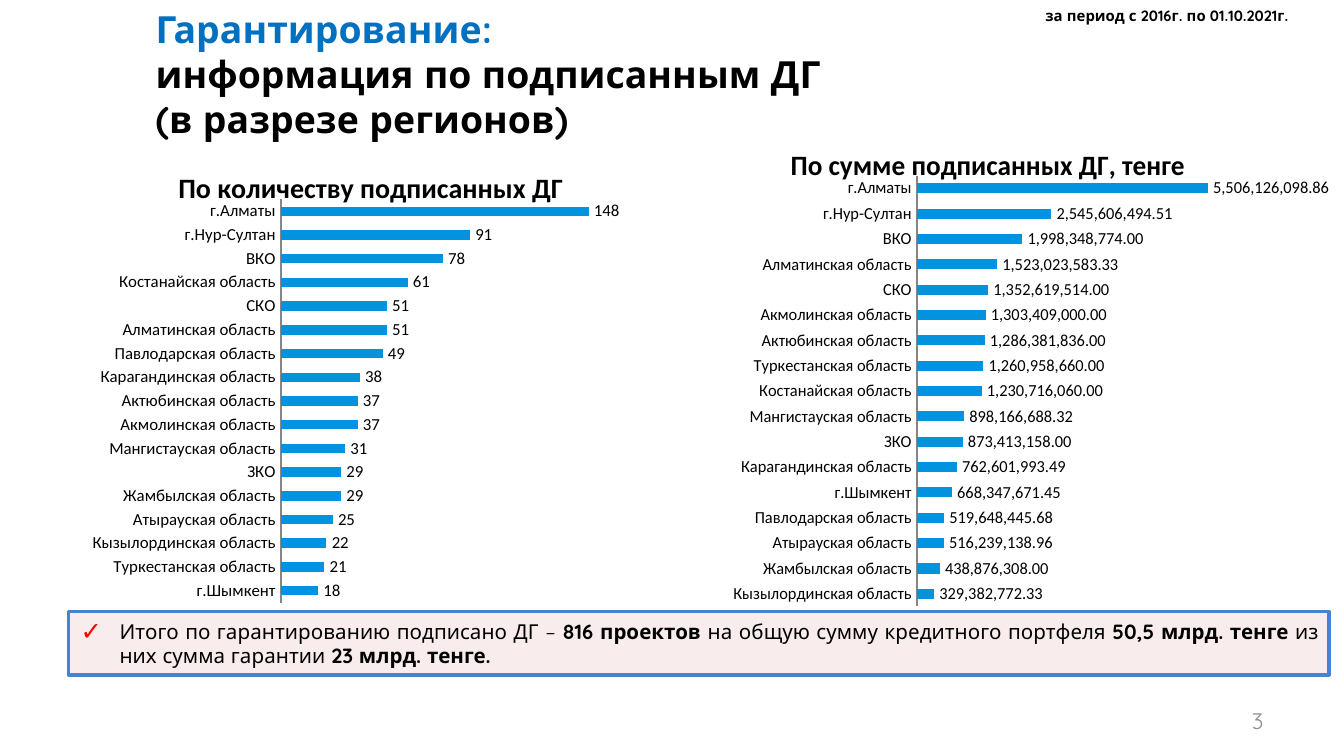
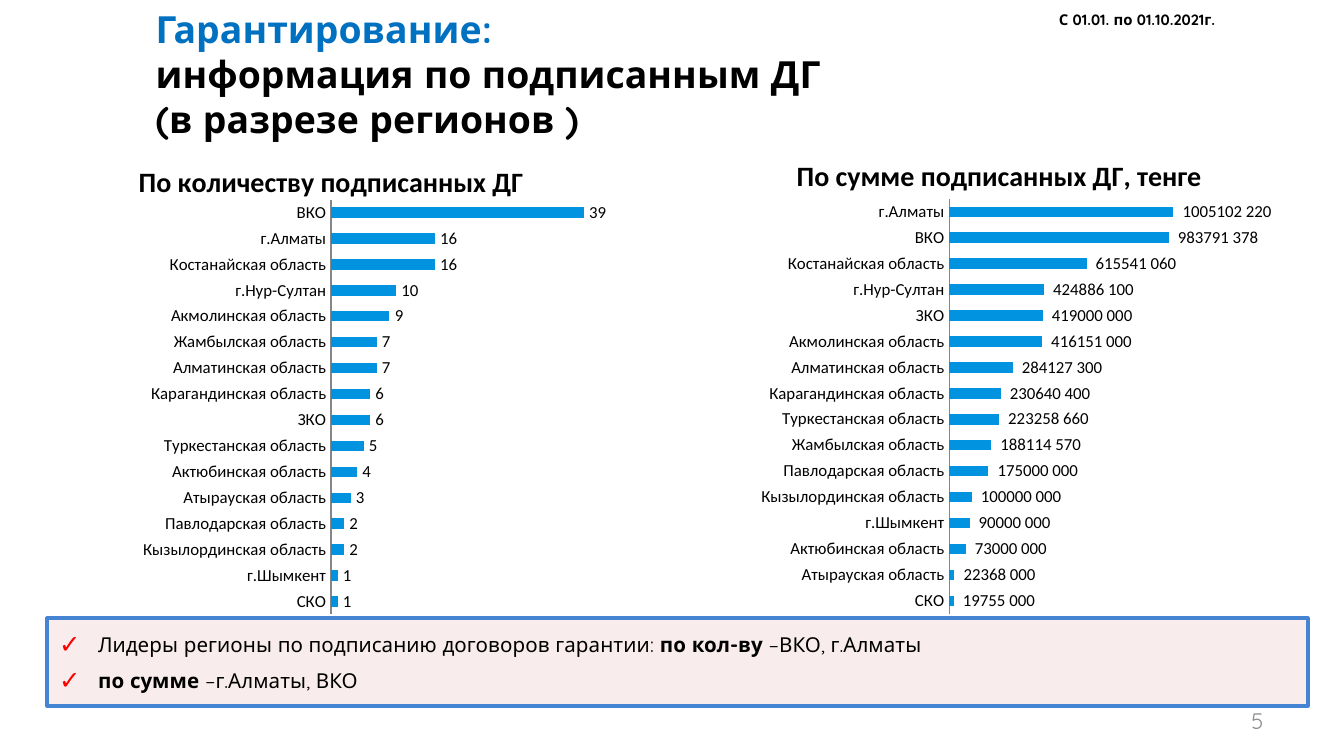
from lxml.etree import SubElement
from pptx import Presentation
from pptx.chart.data import CategoryChartData
from pptx.dml.color import RGBColor
from pptx.enum.chart import XL_CHART_TYPE, XL_LABEL_POSITION, XL_TICK_LABEL_POSITION, XL_TICK_MARK
from pptx.enum.shapes import MSO_SHAPE
from pptx.enum.text import MSO_ANCHOR, PP_ALIGN
from pptx.oxml import parse_xml
from pptx.oxml.ns import nsdecls, qn
from pptx.util import Inches, Pt

BLACK = RGBColor(0x00, 0x00, 0x00)
BLUE = RGBColor(0x00, 0x70, 0xC0)
BAR = RGBColor(0x02, 0x93, 0xE0)
GRAY = RGBColor(0x8C, 0x8C, 0x8C)
AXIS = RGBColor(0x86, 0x86, 0x86)
PINK = RGBColor(0xF2, 0xDC, 0xDB)
BORDER = RGBColor(0x45, 0x84, 0xD3)
RED = RGBColor(0xFF, 0x00, 0x00)

HEAD = {"name": "Quicksand", "size": Pt(20), "bold": True, "color": BLACK}
DATE = {**HEAD, "size": Pt(8)}
BODY = {**HEAD, "size": Pt(11), "bold": False}
NUMBER = {**BODY, "size": Pt(12), "color": GRAY}
CHART_TITLE = {"name": "Calibri", "size": Pt(15), "bold": True, "color": BLACK}
CHART_TEXT = {**CHART_TITLE, "size": Pt(9), "bold": False}

SPACED = r'_-* #\ ##0_р_._-;\-* #\ ##0_р_._-;_-* "-"'
COUNT_TITLE = "По количеству подписанных ДГ"
SUM_TITLE = "По сумме подписанных ДГ, тенге"

prs = Presentation()
prs.slide_width = Inches(10)
prs.slide_height = prs.slide_width * 9 // 16
COL, ROW = prs.slide_width / 100, prs.slide_height / 100


def place(box):
    return [int(n * unit) for n, unit in zip(box, (COL, ROW, COL, ROW))]


def style(font, fmt):
    for key, value in fmt.items():
        if key == "color":
            font.color.rgb = value
        else:
            setattr(font, key, value)


def add_run(p, text, fmt):
    r = p.add_run()
    r.text = text
    style(r.font, fmt)


def add_text(s, box, wrap=True):
    tf = s.shapes.add_textbox(*place(box)).text_frame
    tf.word_wrap = wrap
    return tf


def add_header(s, box, last_line):
    tf = add_text(s, box)
    p = tf.paragraphs[0]
    add_run(p, "Гарантирование: ", {**HEAD, "color": BLUE})
    p.add_line_break()
    add_run(p, "информация по подписанным ДГ", HEAD)
    add_run(tf.add_paragraph(), last_line, HEAD)


def add_period(s, box, text):
    add_run(add_text(s, box, wrap=False).paragraphs[0], text, DATE)


def add_number(s, box, text):
    tf = add_text(s, box)
    tf.vertical_anchor = MSO_ANCHOR.MIDDLE
    p = tf.paragraphs[0]
    p.alignment = PP_ALIGN.RIGHT
    add_run(p, text, NUMBER)


def add_check(p):
    pPr = p._p.get_or_add_pPr()
    pPr.set("marL", str(Inches(0.3)))
    pPr.set("indent", str(Inches(-0.29)))
    color = SubElement(pPr, qn("a:buClr"))
    SubElement(color, qn("a:srgbClr")).set("val", str(RED))
    SubElement(pPr, qn("a:buSzPct")).set("val", "125000")
    SubElement(pPr, qn("a:buFont")).set("typeface", "Quicksand")
    SubElement(pPr, qn("a:buChar")).set("char", "✓")


def add_summary(s, box, paragraphs):
    sp = s.shapes.add_shape(MSO_SHAPE.RECTANGLE, *place(box))
    sp.shadow.inherit = False
    sp.fill.solid()
    sp.fill.fore_color.rgb = PINK
    color = sp.fill._xPr.find(qn("a:solidFill"))[0]
    SubElement(color, qn("a:alpha")).set("val", "50000")
    sp.line.color.rgb = BORDER
    sp.line.width = Pt(2)
    tf = sp.text_frame
    frame = {"word_wrap": True, "vertical_anchor": MSO_ANCHOR.MIDDLE,
             "margin_left": Inches(0.08), "margin_right": Inches(0.08),
             "margin_top": Inches(0.04), "margin_bottom": Inches(0.04)}
    for key, value in frame.items():
        setattr(tf, key, value)
    for i, runs in enumerate(paragraphs):
        p = tf.add_paragraph() if i else tf.paragraphs[0]
        p.alignment = PP_ALIGN.JUSTIFY
        p.space_after = Pt(6)
        add_check(p)
        for text, bold in runs:
            add_run(p, text, {**BODY, "bold": bold})


def set_plot_area(chart, shares):
    area = chart.element.find(".//" + qn("c:plotArea"))
    for layout in area.findall(qn("c:layout")):
        area.remove(layout)
    sizes = "".join(f'<c:{key} val="{value}"/>' for key, value in zip("xywh", shares))
    area.insert(0, parse_xml(
        f'<c:layout {nsdecls("c")}><c:manualLayout><c:layoutTarget val="inner"/>'
        f'<c:xMode val="edge"/><c:yMode val="edge"/>{sizes}</c:manualLayout></c:layout>'))


def add_bars(s, box, title, regions, plot_shares, maximum, number_format="General"):
    data = CategoryChartData()
    data.categories = [name + " область" if name.endswith("ская") else name for name in regions]
    data.add_series("Series 1", list(regions.values()))
    chart = s.shapes.add_chart(XL_CHART_TYPE.BAR_CLUSTERED, *place(box), data).chart
    style(chart.font, CHART_TEXT)
    chart.has_legend = False
    chart.has_title = True
    add_run(chart.chart_title.text_frame.paragraphs[0], title, CHART_TITLE)
    chart.chart_title.include_in_layout = False
    set_plot_area(chart, plot_shares)

    axis = chart.category_axis
    axis.major_tick_mark = axis.minor_tick_mark = XL_TICK_MARK.NONE
    axis.tick_label_position = XL_TICK_LABEL_POSITION.NEXT_TO_AXIS
    axis.format.line.color.rgb = AXIS
    axis.format.line.width = Pt(1)
    style(axis.tick_labels.font, CHART_TEXT)
    values = chart.value_axis
    values.minimum_scale, values.maximum_scale = 0, maximum
    values.has_major_gridlines = False
    values.visible = False

    plot = chart.plots[0]
    plot.gap_width = 150
    plot.vary_by_categories = False
    series = plot.series[0]
    series.format.fill.solid()
    series.format.fill.fore_color.rgb = BAR
    labels = series.data_labels
    labels.show_value = True
    labels.position = XL_LABEL_POSITION.OUTSIDE_END
    labels.number_format = number_format
    labels.number_format_is_linked = False
    style(labels.font, CHART_TEXT)


def add_region_slide(header, period, number, summary, charts):
    s = prs.slides.add_slide(prs.slide_layouts[6])
    add_number(s, (71.7, 92.7, 23.3, 5.34), number)
    add_header(s, *header)
    add_summary(s, *summary)
    add_period(s, *period)
    for chart in charts:
        add_bars(s, *chart)


COUNT_ALL = {
    "г.Шымкент": 18, "Туркестанская": 21, "Кызылординская": 22, "Атырауская": 25,
    "Жамбылская": 29, "ЗКО": 29, "Мангистауская": 31, "Акмолинская": 37,
    "Актюбинская": 37, "Карагандинская": 38, "Павлодарская": 49, "Алматинская": 51,
    "СКО": 51, "Костанайская": 61, "ВКО": 78, "г.Нур-Султан": 91, "г.Алматы": 148,
}
SUM_ALL = {
    "Кызылординская": 329382772.33, "Жамбылская": 438876308, "Атырауская": 516239138.96,
    "Павлодарская": 519648445.68, "г.Шымкент": 668347671.45, "Карагандинская": 762601993.49,
    "ЗКО": 873413158, "Мангистауская": 898166688.32, "Костанайская": 1230716060,
    "Туркестанская": 1260958660, "Актюбинская": 1286381836, "Акмолинская": 1303409000,
    "СКО": 1352619514, "Алматинская": 1523023583.33, "ВКО": 1998348774,
    "г.Нур-Султан": 2545606494.51, "г.Алматы": 5506126098.86,
}
COUNT_2021 = {
    "СКО": 1, "г.Шымкент": 1, "Кызылординская": 2, "Павлодарская": 2, "Атырауская": 3,
    "Актюбинская": 4, "Туркестанская": 5, "ЗКО": 6, "Карагандинская": 6,
    "Алматинская": 7, "Жамбылская": 7, "Акмолинская": 9, "г.Нур-Султан": 10,
    "Костанайская": 16, "г.Алматы": 16, "ВКО": 39,
}
SUM_2021 = {
    "СКО": 19755000, "Атырауская": 22368000, "Актюбинская": 73000000, "г.Шымкент": 90000000,
    "Кызылординская": 100000000, "Павлодарская": 175000000, "Жамбылская": 188114570,
    "Туркестанская": 223258660, "Карагандинская": 230640400, "Алматинская": 284127300,
    "Акмолинская": 416151000, "ЗКО": 419000000, "г.Нур-Султан": 424886100,
    "Костанайская": 615541060, "ВКО": 983791378, "г.Алматы": 1005102220,
}


def main():
    add_region_slide(
        header=((10.6, 0, 75.2, 11.39), "(в разрезе регионов)"),
        period=((76.8, 0, 20.9, 4.27), "за период с 2016г. по 01.10.2021г."),
        number="3",
        summary=((5.1, 80.9, 93.8, 8.36), [[
            ("Итого по гарантированию подписано ДГ – ", False),
            ("816 проектов ", True),
            ("на общую сумму кредитного портфеля ", False),
            ("50,5 млрд. тенге ", True),
            ("из них сумма гарантии ", False),
            ("23 млрд. тенге.", True)]]),
        charts=[
            ((1.8, 19.4, 51.6, 63.5), COUNT_TITLE, COUNT_ALL, (0.37, 0.11, 0.48, 0.84), 160),
            ((49.4, 16.3, 49.5, 69.5), SUM_TITLE, SUM_ALL, (0.39, 0.1, 0.49, 0.82),
             6_000_000_000, "#,##0.00")])
    add_region_slide(
        header=((10.6, 0, 70.1, 15.84), "(в разрезе регионов )"),
        period=((77.8, 0.53, 14.8, 4.27), "С 01.01. по 01.10.2021г."),
        number="5",
        summary=((3.5, 81.8, 93.8, 11.57), [
            [("Лидеры регионы по подписанию договоров гарантии: ", False),
             ("по кол-ву ", True), ("–ВКО, г.Алматы", False)],
            [("по сумме ", True), ("–г.Алматы, ВКО", False)]]),
        charts=[
            ((0, 18.6, 49.3, 65.3), COUNT_TITLE, COUNT_2021, (0.5, 0.12, 0.44, 0.84), 45),
            ((51.2, 17.8, 46.3, 65.4), SUM_TITLE, SUM_2021, (0.42, 0.13, 0.43, 0.84),
             1_200_000_000, SPACED)])
    prs.save("out.pptx")


if __name__ == "__main__":
    main()
